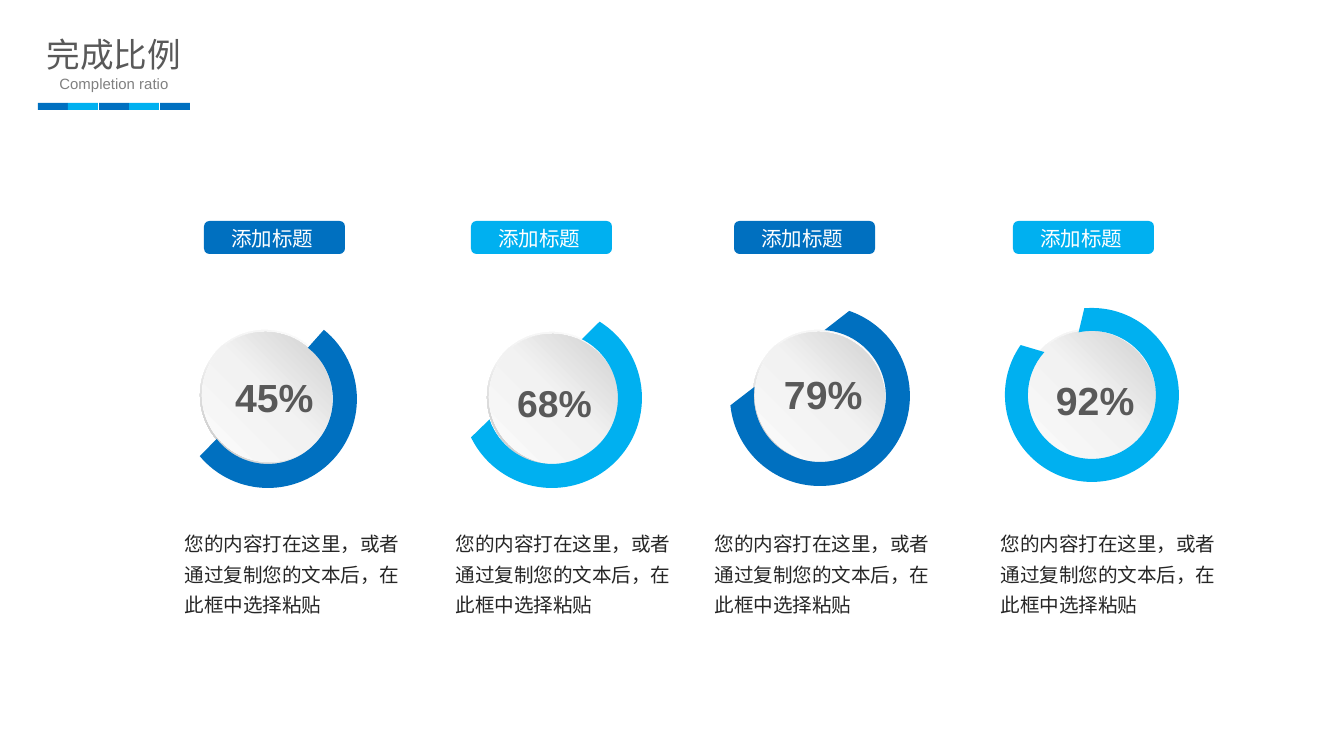
import math
from dataclasses import dataclass
from typing import NamedTuple

from lxml import etree
from pptx import Presentation
from pptx.dml.color import RGBColor
from pptx.enum.shapes import MSO_SHAPE
from pptx.enum.text import MSO_ANCHOR, PP_ALIGN
from pptx.oxml.ns import qn
from pptx.util import Emu, Pt

PX = 914400 / 134.4
SLIDE_WIDTH, SLIDE_HEIGHT = 1344, 756

RECTANGLE = MSO_SHAPE.RECTANGLE
PILL = MSO_SHAPE.FLOWCHART_ALTERNATE_PROCESS
DONUT = MSO_SHAPE.DONUT
ELLIPSE = MSO_SHAPE.OVAL
LEFT, CENTER = PP_ALIGN.LEFT, PP_ALIGN.CENTER
TOP = MSO_ANCHOR.TOP

LABEL = "添加标题"
BODY = "您的内容打在这里，或者通过复制您的文本后，在此框中选择粘贴"


class Box(NamedTuple):
    left: int
    top: int
    width: int
    height: int


class TextStyle(NamedTuple):
    size: float
    color: str
    bold: bool = False
    align: PP_ALIGN = LEFT
    wrap: bool = True
    margins: tuple[int, int] = (13, 7)
    line_spacing: float = 1.0


class Gradient(NamedTuple):
    stops: tuple[tuple[int, str], ...]
    angle: int


@dataclass(frozen=True)
class Theme:
    font: str = "Arial"
    dark_blue: str = "0070C0"
    light_blue: str = "00B0F0"
    rim: Gradient = Gradient(((0, "FFFFFF"), (55, "F2F2F2"), (100, "A6A6A6")), 135)
    face: Gradient = Gradient(((0, "FFFFFF"), (51, "F2F2F2"), (100, "BFBFBF")), 315)
    title: TextStyle = TextStyle(18, "595959", align=CENTER, wrap=False, margins=(9, 5))
    subtitle: TextStyle = TextStyle(8, "808080", align=CENTER)
    label: TextStyle = TextStyle(11, "FFFFFF", align=CENTER, wrap=False)
    percent: TextStyle = TextStyle(21, "595959", bold=True)
    small_percent: TextStyle = TextStyle(20, "595959", bold=True)
    body: TextStyle = TextStyle(10.5, "262626", margins=(10, 5), line_spacing=1.3)


THEME = Theme()


class Arc(NamedTuple):
    """A ring section; angles are (start, end) in degrees, clockwise from the right."""
    center: tuple[int, int]
    outer_radius: int
    inner_radius: int
    outer_angles: tuple[int, int]
    inner_angles: tuple[int, int]


@dataclass(frozen=True)
class Gauge:
    percent: str
    percent_box: Box
    percent_style: TextStyle
    color: str
    label_left: int
    dial: tuple[int, int]
    body_left: int
    arc: Arc


GAUGES = [
    Gauge("45%", Box(222, 366, 121, 60), THEME.percent, THEME.dark_blue, 204, (201, 329), 175,
          Arc((268, 399), 89, 65, (-51, 140), (-52, 142))),
    Gauge("68%", Box(504, 373, 110, 59), THEME.small_percent, THEME.light_blue, 471, (488, 331), 446,
          Arc((552, 398), 90, 66, (-58, 154), (-63, 161))),
    Gauge("79%", Box(771, 363, 122, 60), THEME.percent, THEME.dark_blue, 734, (754, 329), 705,
          Arc((820, 396), 90, 66, (-71, 174), (-86, 188))),
    Gauge("92%", Box(1043, 369, 122, 60), THEME.percent, THEME.light_blue, 1013, (1025, 328), 991,
          Arc((1092, 395), 87, 64, (-95, 215), (-102, 222))),
]


def px(value: float) -> Emu:
    return Emu(round(value * PX))


def place(shape, box: Box) -> None:
    for name, value in box._asdict().items():
        setattr(shape, name, px(value))


def write(shape, text: str, style: TextStyle) -> None:
    frame = shape.text_frame
    horizontal, vertical = map(px, style.margins)
    frame_format = {"word_wrap": style.wrap, "vertical_anchor": TOP,
                    "margin_left": horizontal, "margin_right": horizontal,
                    "margin_top": vertical, "margin_bottom": vertical}
    for name, value in frame_format.items():
        setattr(frame, name, value)
    paragraph = frame.paragraphs[0]
    paragraph.alignment = style.align
    paragraph.line_spacing = style.line_spacing
    run = paragraph.add_run()
    run.text = text
    font_format = {"name": THEME.font, "size": Pt(style.size), "bold": style.bold}
    for name, value in font_format.items():
        setattr(run.font, name, value)
    run.font.color.rgb = RGBColor.from_string(style.color)


def add_text(slide, box: Box, text: str, style: TextStyle) -> None:
    write(slide.shapes.add_textbox(*map(px, box)), text, style)


def fill_solid(shape, color: str) -> None:
    shape.shadow.inherit = False
    shape.line.fill.background()
    shape.fill.solid()
    shape.fill.fore_color.rgb = RGBColor.from_string(color)


def add_solid(slide, kind: MSO_SHAPE, box: Box, color: str) -> None:
    fill_solid(slide.shapes.add_shape(kind, *map(px, box)), color)


def fill_gradient(shape, gradient: Gradient) -> None:
    """Fill with any number of stops, at an angle that ignores the shape's rotation."""
    shape.shadow.inherit = False
    shape.line.fill.background()
    shape.fill.gradient()
    fill = shape._element.spPr.find(qn("a:gradFill"))
    for child in list(fill):
        fill.remove(child)
    fill.set("rotWithShape", "0")
    stops = etree.SubElement(fill, qn("a:gsLst"))
    for position, color in gradient.stops:
        stop = etree.SubElement(stops, qn("a:gs"), pos=str(position * 1000))
        etree.SubElement(stop, qn("a:srgbClr"), val=color)
    etree.SubElement(fill, qn("a:lin"), ang=str(gradient.angle * 60000), scaled="0")


def add_dial(slide, left: int, top: int) -> None:
    rim = slide.shapes.add_shape(DONUT, *map(px, Box(left, top, 132, 136)))
    rim.adjustments[0] = 0.05
    face = slide.shapes.add_shape(ELLIPSE, *map(px, Box(left + 2, top + 2, 128, 132)))
    for shape, gradient in ((rim, THEME.rim), (face, THEME.face)):
        shape.rotation = 315
        fill_gradient(shape, gradient)


def curve_points(center: tuple[int, int], radius: int, start: int, end: int) -> list[tuple[Emu, Emu]]:
    """Start point, then two controls and an end for each curve, split at the quadrants."""
    cuts = [start, *(angle for angle in range(-360, 361, 90) if start < angle < end), end]

    def point(degrees: float, tangent: float) -> tuple[Emu, Emu]:
        cosine, sine = math.cos(math.radians(degrees)), math.sin(math.radians(degrees))
        return (px(center[0] + radius * (cosine - tangent * sine)),
                px(center[1] + radius * (sine + tangent * cosine)))

    points = [point(start, 0)]
    for first, last in zip(cuts, cuts[1:]):
        reach = 4 / 3 * math.tan(math.radians(last - first) / 4)
        points += [point(first, reach), point(last, -reach), point(last, 0)]
    return points


def round_lines(lines: list) -> None:
    """Join each three line segments into one cubic curve."""
    for first, second, third in zip(lines[::3], lines[1::3], lines[2::3]):
        curve = etree.Element(qn("a:cubicBezTo"))
        first.addprevious(curve)
        for line in (first, second, third):
            curve.append(line[0])
            line.getparent().remove(line)


def add_arc(slide, arc: Arc, color: str) -> None:
    outer = curve_points(arc.center, arc.outer_radius, *arc.outer_angles)
    inner = curve_points(arc.center, arc.inner_radius, *arc.inner_angles)
    builder = slide.shapes.build_freeform(*outer[0])
    builder.add_line_segments(outer[1:] + inner[::-1], close=True)
    shape = builder.convert_to_shape()
    lines = list(shape._element.iter(qn("a:lnTo")))
    round_lines(lines[:len(outer) - 1])
    round_lines(lines[len(outer):len(outer) + len(inner) - 1])
    fill_solid(shape, color)


def add_gauge(slide, gauge: Gauge) -> None:
    add_dial(slide, *gauge.dial)
    add_arc(slide, gauge.arc, gauge.color)
    add_text(slide, gauge.percent_box, gauge.percent, gauge.percent_style)
    add_solid(slide, PILL, Box(gauge.label_left, 221, 141, 33), gauge.color)
    add_text(slide, Box(gauge.label_left + 13, 219, 111, 39), LABEL, THEME.label)
    add_text(slide, Box(gauge.body_left, 520, 242, 102), BODY, THEME.body)


def add_heading(slide) -> None:
    title = slide.shapes.title
    place(title, Box(36, 29, 156, 51))
    write(title, "完成比例", THEME.title)
    add_text(slide, Box(-16, 68, 260, 32), "Completion ratio", THEME.subtitle)
    for index in range(5):
        color = THEME.light_blue if index % 2 else THEME.dark_blue
        add_solid(slide, RECTANGLE, Box(38 + round(index * 30.4), 103, 30, 7), color)


def main() -> None:
    presentation = Presentation()
    presentation.slide_width, presentation.slide_height = px(SLIDE_WIDTH), px(SLIDE_HEIGHT)
    slide = presentation.slides.add_slide(presentation.slide_layouts[5])
    add_heading(slide)
    for gauge in GAUGES:
        add_gauge(slide, gauge)
    presentation.save("out.pptx")


if __name__ == "__main__":
    main()
